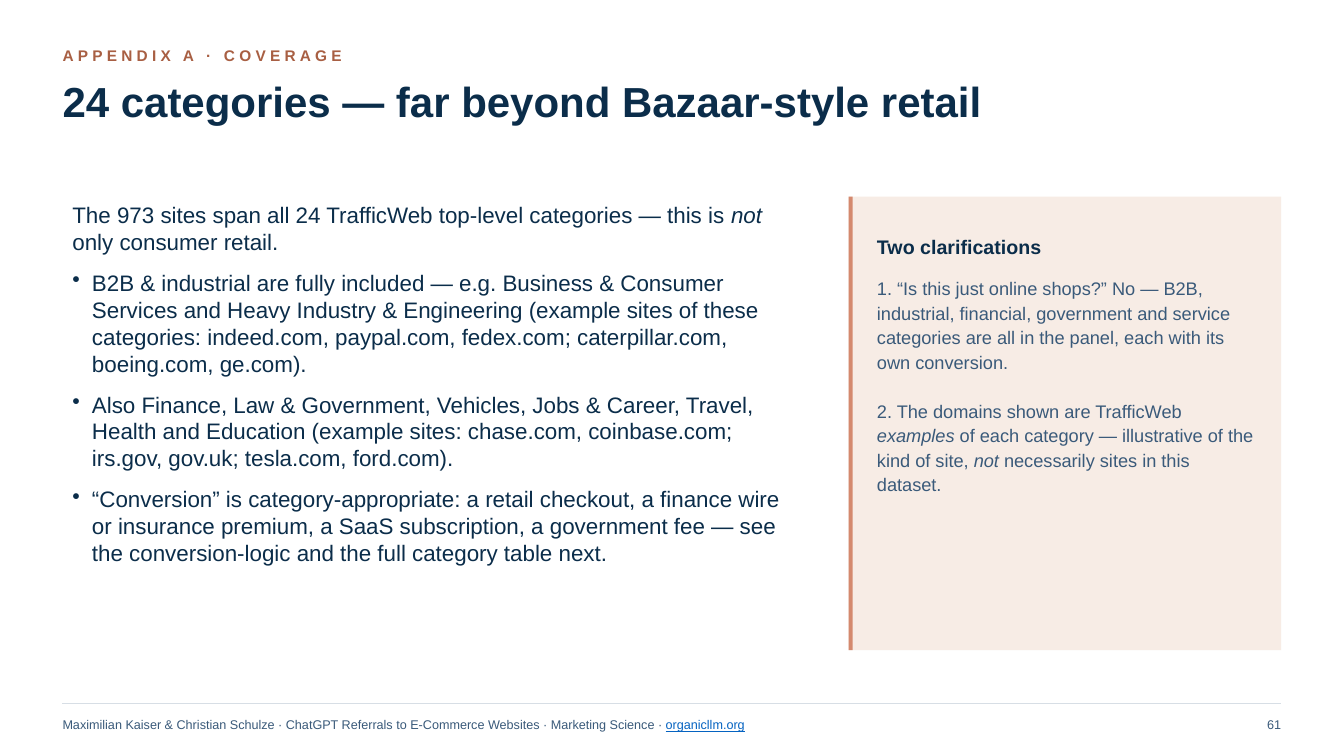
"""Build the appendix slide on category coverage."""
from lxml import etree
from pptx import Presentation
from pptx import util as u
from pptx.dml.color import RGBColor
from pptx.enum import shapes, text
from pptx.oxml.ns import qn

NAVY = RGBColor(0x0B, 0x2D, 0x4A)
SLATE = RGBColor(0x3A, 0x5A, 0x7A)
RUST = RGBColor(0xA8, 0x5F, 0x43)
CORAL = RGBColor(0xD4, 0x89, 0x6E)
BLUSH = RGBColor(0xF7, 0xEC, 0xE5)
RULE = RGBColor(0xD7, 0xDE, 0xE5)
LINK = RGBColor(0x05, 0x63, 0xC1)

LEFT, WIDTH = 44.64, 870.48
RIGHT = LEFT + WIDTH
PANEL_X, PANEL_Y, PANEL_H = 606.24, 140.4, 324
NOTE_X, NOTE_W = 626.4, 272.88
FOOT_Y, PAGE_W = 506.88, 72

INTRO = ["The 973 sites span all 24 TrafficWeb top-level categories — this is ",
         ("not", {"italic": True}), " only consumer retail."]
BULLETS = [
    "B2B & industrial are fully included — e.g. Business & Consumer Services and Heavy Industry "
    "& Engineering (example sites of these categories: indeed.com, paypal.com, fedex.com; "
    "caterpillar.com, boeing.com, ge.com).",
    "Also Finance, Law & Government, Vehicles, Jobs & Career, Travel, Health and Education "
    "(example sites: chase.com, coinbase.com; irs.gov, gov.uk; tesla.com, ford.com).",
    "“Conversion” is category-appropriate: a retail checkout, a finance wire or insurance "
    "premium, a SaaS subscription, a government fee — see the conversion-logic and the full "
    "category table next.",
]
SHOPS = ("1. “Is this just online shops?” No — B2B, industrial, financial, government and "
         "service categories are all in the panel, each with its own conversion.")
DOMAINS = ["2. The domains shown are TrafficWeb ", ("examples", {"italic": True}),
           " of each category — illustrative of the kind of site, ",
           ("not", {"italic": True}), " necessarily sites in this dataset."]
SOURCE = ["Maximilian Kaiser & Christian Schulze · ChatGPT Referrals to E-Commerce Websites · "
          "Marketing Science · ", ("organicllm.org", {"color": LINK, "underline": True})]


def write(p, content, size=16, color=NAVY, bold=False, tracking=0, bullet=False,
          before=0, after=0, leading=None, align=text.PP_ALIGN.LEFT):
    """Fill a paragraph with a string or a list of strings and (string, format) pairs."""
    p.alignment = align
    p.space_before, p.space_after = u.Pt(before), u.Pt(after)
    if leading:
        p.line_spacing = leading
    if bullet:
        pPr = p._p.get_or_add_pPr()
        pPr.set("marL", str(u.Pt(14)))
        pPr.set("indent", str(u.Pt(-14)))
        etree.SubElement(pPr, qn("a:buChar")).set("char", "•")
    for part in [content] if isinstance(content, str) else content:
        words, extra = (part, {}) if isinstance(part, str) else part
        r = p.add_run()
        r.text = words
        f = r.font
        f.name, f.size, f.bold = "Arial", u.Pt(size), bold
        f.color.rgb = extra.get("color", color)
        f.italic = extra.get("italic")
        f.underline = extra.get("underline")
        if tracking:
            r._r.get_or_add_rPr().set("spc", str(tracking * 100))


class Deck:
    """Hold the presentation, its current slide and the ways to draw on it."""

    def __init__(self):
        self.prs = Presentation()
        self.prs.slide_width, self.prs.slide_height = u.Pt(960), u.Pt(540)
        self.s = self.prs.slides.add_slide(self.prs.slide_layouts[5])

    def frame(self, sp, inset=0, middle=False):
        tf = sp.text_frame
        tf.word_wrap = True
        tf.auto_size = text.MSO_AUTO_SIZE.NONE
        tf.margin_left = tf.margin_right = u.Pt(inset)
        tf.margin_top = tf.margin_bottom = u.Pt(inset / 2)
        tf.vertical_anchor = text.MSO_ANCHOR.MIDDLE if middle else text.MSO_ANCHOR.TOP
        return tf

    def title(self, x, y, w, h, content, **fmt):
        sp = self.s.shapes.title
        sp.left, sp.top, sp.width, sp.height = map(u.Pt, (x, y, w, h))
        write(self.frame(sp).paragraphs[0], content, **fmt)

    def text(self, x, y, w, h, *paras, inset=0, middle=False, **fmt):
        sp = self.s.shapes.add_textbox(*map(u.Pt, (x, y, w, h)))
        tf = self.frame(sp, inset, middle)
        for i, (content, own) in enumerate(paras):
            p = tf.add_paragraph() if i else tf.paragraphs[0]
            write(p, content, **{**fmt, **own})

    def rect(self, x, y, w, h, color):
        sp = self.s.shapes.add_shape(shapes.MSO_SHAPE.RECTANGLE, *map(u.Pt, (x, y, w, h)))
        sp.shadow.inherit = False
        sp.fill.solid()
        sp.fill.fore_color.rgb = color
        sp.line.fill.background()

    def rule(self, x1, x2, y, color, width):
        sp = self.s.shapes.add_connector(shapes.MSO_CONNECTOR.STRAIGHT,
                                         *map(u.Pt, (x1, y, x2, y)))
        sp.line.color.rgb, sp.line.width = color, u.Pt(width)
        etree.SubElement(sp._element.spPr, qn("a:effectLst"))


def main():
    """Draw the slide and save it."""
    d = Deck()
    d.text(LEFT, 28.8, WIDTH, 21.6, ("APPENDIX A · COVERAGE", {}), middle=True,
           size=11, color=RUST, bold=True, tracking=3)
    d.title(LEFT, 53.28, WIDTH, 68.4, "24 categories — far beyond Bazaar-style retail",
            size=30, bold=True, leading=1.02)
    d.text(LEFT, PANEL_Y, 532.8, 331.2, (INTRO, {}),
           *[(b, {"bullet": True}) for b in BULLETS], inset=7.2, after=10)
    d.rect(PANEL_X, PANEL_Y, RIGHT - PANEL_X, PANEL_H, BLUSH)
    d.rect(PANEL_X, PANEL_Y, 2.88, PANEL_H, CORAL)
    d.text(NOTE_X, 158.4, NOTE_W, 36, ("Two clarifications", {}), middle=True,
           size=14, bold=True)
    d.text(NOTE_X, 196.56, NOTE_W, 252, (SHOPS, {}), (DOMAINS, {"before": 17.5}),
           size=13, color=SLATE, leading=1.12)
    d.rule(LEFT, RIGHT, 502.56, RULE, 0.5)
    d.text(LEFT, FOOT_Y, WIDTH - PAGE_W, 21.6, (SOURCE, {}), middle=True, size=9, color=SLATE)
    d.text(RIGHT - PAGE_W, FOOT_Y, PAGE_W, 21.6, ("61", {}), middle=True, size=9,
           color=SLATE, align=text.PP_ALIGN.RIGHT)
    d.prs.save("out.pptx")


if __name__ == "__main__":
    main()
